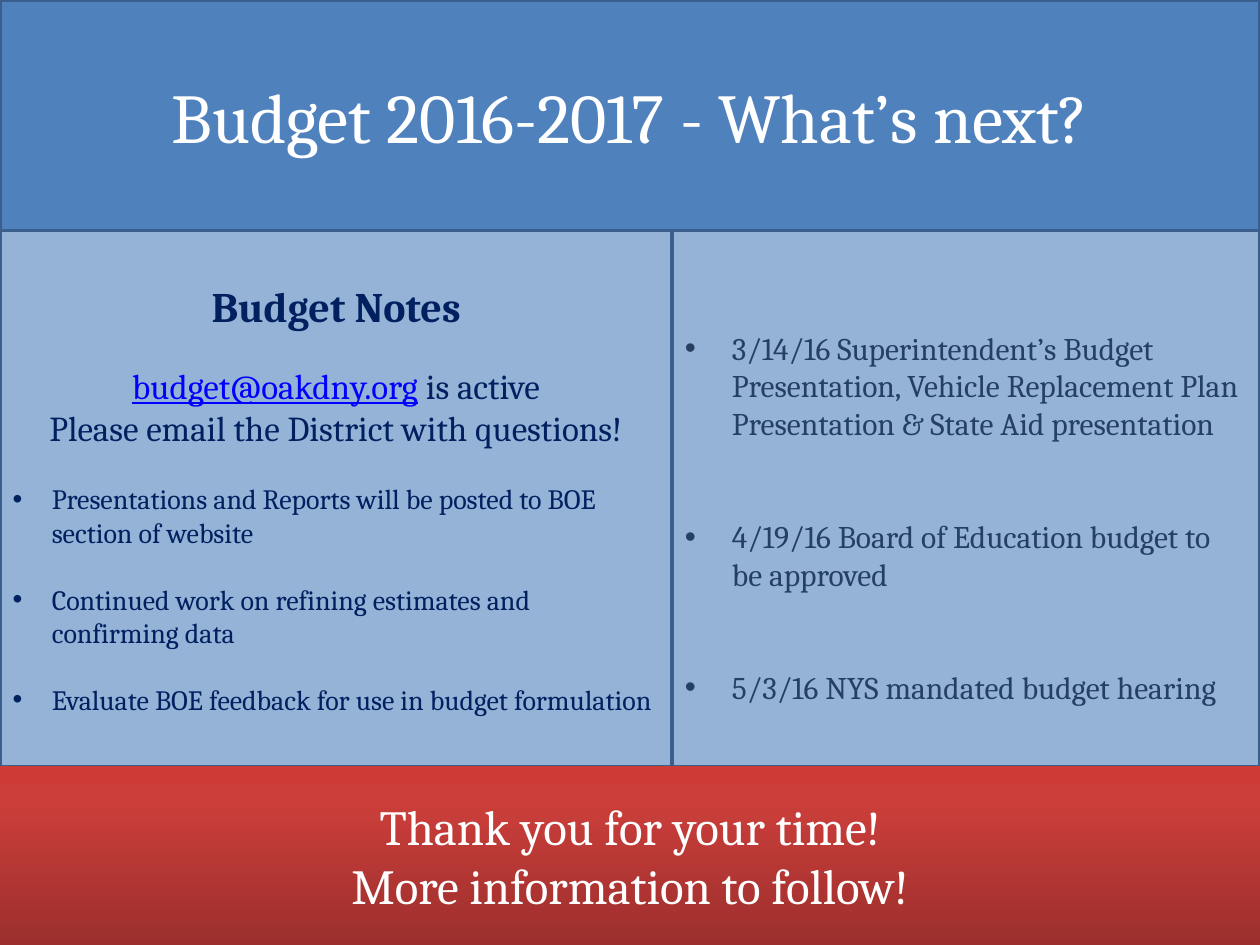
from copy import deepcopy
from dataclasses import dataclass

from lxml import etree
from pptx import Presentation
from pptx import util as u
from pptx.dml import color
from pptx.enum import shapes, text
from pptx.oxml import ns


@dataclass(frozen=True)
class Theme:
    font: str = "Cambria"
    header: str = "4F81BD"
    panel: str = "95B3D7"
    border: str = "3A5F8C"
    white: str = "FFFFFF"
    navy: str = "002060"
    slate: str = "254061"
    link: str = "0000FF"
    footer: tuple = ((0, "9C2F2D"), (0.8, "CB3E3A"), (1, "CE3B37"))
    title_size: int = 40
    closing_size: int = 28
    heading_size: int = 24
    contact_size: int = 20
    date_size: int = 18
    bullet_size: int = 16
    border_width: int = 2


THEME = Theme()
WIDTH, HEIGHT = 25.4, 19.05
HEADER_HEIGHT, PANEL_HEIGHT, LEFT_WIDTH = 4.65, 10.8, 13.55
FOOTER_TOP = HEADER_HEIGHT + PANEL_HEIGHT

BUDGET_POINTS = (
    "Presentations and Reports will be posted to BOE section of website",
    "Continued work on refining estimates and confirming data",
    "Evaluate BOE feedback for use in budget formulation",
)
DATES = (
    "3/14/16 Superintendent’s Budget Presentation, Vehicle Replacement Plan "
    "Presentation & State Aid presentation",
    "4/19/16 Board of Education budget to be approved",
    "5/3/16 NYS mandated budget hearing",
)


def rgb(value):
    return color.RGBColor.from_string(value)


def add_run(paragraph, words, *, size, ink, bold=False, underline=False):
    run = paragraph.add_run()
    run.text = words
    run.font.name = THEME.font
    run.font.size = u.Pt(size)
    run.font.bold = bold
    run.font.underline = underline
    run.font.color.rgb = rgb(ink)


def add_paragraph(frame, words, *, before=0, indent=0, **style):
    first = frame.paragraphs[0]
    paragraph = frame.add_paragraph() if first.runs else first
    paragraph.space_before = u.Pt(before)
    properties = paragraph._p.get_or_add_pPr()
    hanging = u.Cm(indent)
    properties.set("marL", str(int(hanging)))
    properties.set("indent", str(-int(hanging)))
    if indent:
        paragraph.alignment = text.PP_ALIGN.LEFT
        bullet = etree.SubElement(properties, ns.qn("a:buChar"))
        bullet.set("char", "•")
    else:
        paragraph.alignment = text.PP_ALIGN.CENTER
        etree.SubElement(properties, ns.qn("a:buNone"))
    add_run(paragraph, words, **style)
    return paragraph


def place(shape, left, top, width, height):
    shape.left, shape.top = u.Cm(left), u.Cm(top)
    shape.width, shape.height = u.Cm(width), u.Cm(height)
    frame = shape.text_frame
    frame.word_wrap = True
    frame.auto_size = text.MSO_AUTO_SIZE.NONE
    frame.vertical_anchor = text.MSO_ANCHOR.MIDDLE
    return frame


def paint_panel(shape, fill):
    shape.fill.solid()
    shape.fill.fore_color.rgb = rgb(fill)
    shape.line.color.rgb = rgb(THEME.border)
    shape.line.width = u.Pt(THEME.border_width)


def paint_gradient(shape, stops):
    shape.fill.gradient()
    shape.fill.gradient_angle = 90
    stop_list = shape._element.spPr.find(".//" + ns.qn("a:gsLst"))
    stop_list.append(deepcopy(stop_list[-1]))
    for stop, (position, value) in zip(shape.fill.gradient_stops, stops):
        stop.position = position
        stop.color.rgb = rgb(value)


def fill_header(shape):
    frame = place(shape, 0, 0, WIDTH, HEADER_HEIGHT)
    paint_panel(shape, THEME.header)
    add_paragraph(frame, "Budget 2016-2017 - What’s next?",
                  size=THEME.title_size, ink=THEME.white)


def fill_budget_panel(shape):
    frame = place(shape, 0, HEADER_HEIGHT, LEFT_WIDTH, PANEL_HEIGHT)
    paint_panel(shape, THEME.panel)
    contact = {"size": THEME.contact_size, "ink": THEME.navy}
    add_paragraph(frame, "Budget Notes", size=THEME.heading_size,
                  ink=THEME.navy, bold=True)
    address = add_paragraph(frame, "budget@oakdny.org", before=19,
                            size=THEME.contact_size, ink=THEME.link,
                            underline=True)
    add_run(address, " is active", **contact)
    add_paragraph(frame, "Please email the District with questions!", **contact)
    for point in BUDGET_POINTS:
        add_paragraph(frame, point, before=19, indent=0.79,
                      size=THEME.bullet_size, ink=THEME.navy)


def fill_date_panel(shape):
    frame = place(shape, LEFT_WIDTH, HEADER_HEIGHT,
                  WIDTH - LEFT_WIDTH, PANEL_HEIGHT)
    paint_panel(shape, THEME.panel)
    frame.margin_top = u.Cm(0.88)
    for position, date in enumerate(DATES):
        add_paragraph(frame, date, before=43 if position else 0, indent=0.95,
                      size=THEME.date_size, ink=THEME.slate)


def add_footer(slide):
    shape = slide.shapes.add_shape(shapes.MSO_SHAPE.RECTANGLE, 0, 0, 0, 0)
    frame = place(shape, 0, FOOTER_TOP, WIDTH, HEIGHT - FOOTER_TOP)
    shape.shadow.inherit = False
    shape.line.fill.background()
    paint_gradient(shape, THEME.footer)
    for line in ("Thank you for your time!", "More information to follow!"):
        add_paragraph(frame, line, size=THEME.closing_size, ink=THEME.white)


def main():
    presentation = Presentation()
    presentation.slide_width = u.Cm(WIDTH)
    presentation.slide_height = u.Cm(HEIGHT)
    slide = presentation.slides.add_slide(
        presentation.slide_layouts.get_by_name("Two Content"))
    title, budget_panel, date_panel = list(slide.placeholders)[:3]
    fill_header(title)
    fill_budget_panel(budget_panel)
    fill_date_panel(date_panel)
    add_footer(slide)
    presentation.save("out.pptx")


if __name__ == "__main__":
    main()
